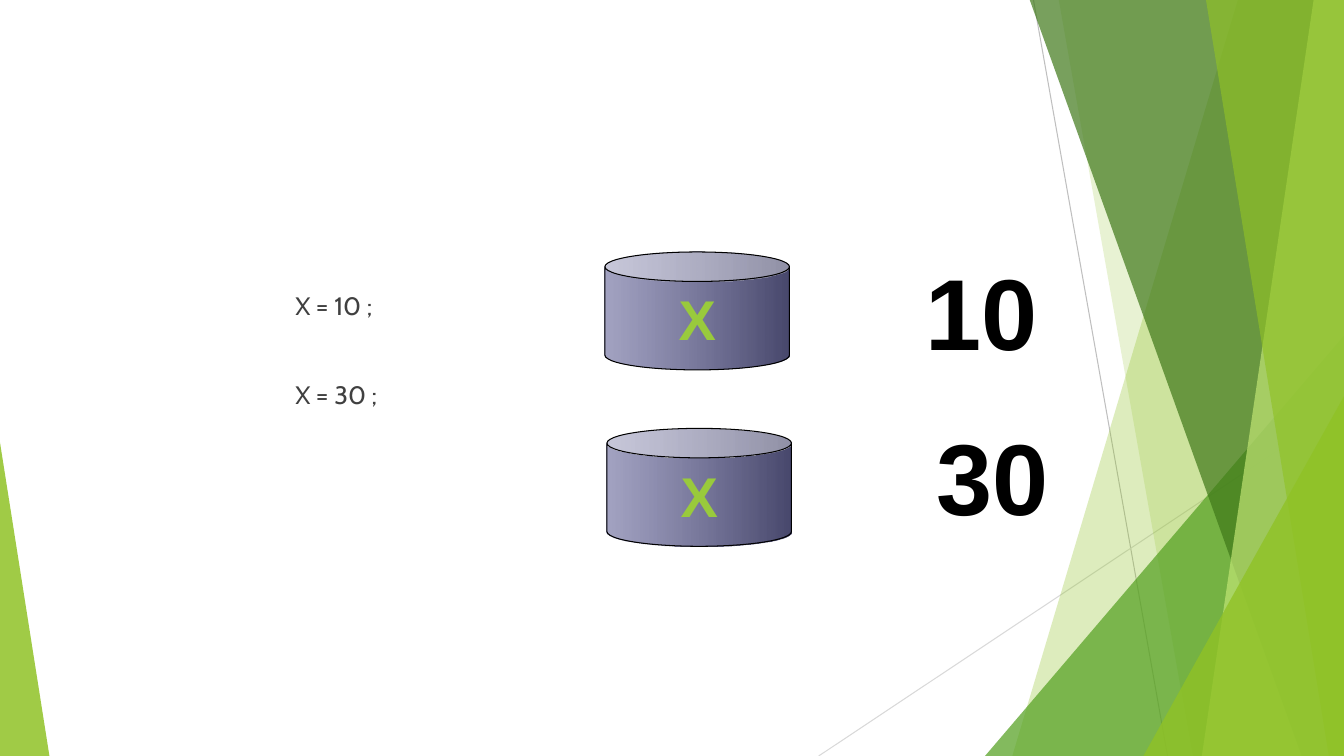
from lxml import etree
from pptx import Presentation
from pptx.dml.color import RGBColor
from pptx.enum import shapes, text
from pptx.oxml import ns
from pptx.util import Inches, Pt

WIDE, HIGH = 13.33, 7.5
LIME = RGBColor(0x90, 0xC2, 0x26)
GREEN = RGBColor(0x54, 0xA0, 0x21)
FOREST = RGBColor(0x3F, 0x78, 0x19)
PALE = RGBColor(0xC0, 0xE4, 0x74)
SILVER = RGBColor(0xBF, 0xBF, 0xBF)
MIST = RGBColor(0xD9, 0xD9, 0xD9)
SLATE = RGBColor(0x66, 0x66, 0x99)
LETTER = RGBColor(0x99, 0xCA, 0x3C)
GREY = RGBColor(0x40, 0x40, 0x40)
BLACK = RGBColor(0, 0, 0)


def adjust(color, tag, percent):
    """Add a modifier such as alpha or shade to a colour element."""
    mod = etree.SubElement(color, ns.qn("a:" + tag))
    mod.set("val", str(round(percent * 1000)))


def tint(shape, color, alpha):
    shape.shadow.inherit = False
    shape.fill.solid()
    shape.fill.fore_color.rgb = color
    adjust(shape.element.spPr.xpath(".//a:srgbClr")[0], "alpha", alpha)
    shape.line.fill.background()


def style(para, font, size, color, bold=False):
    for run in para.runs:
        run.font.name = font
        run.font.size = Pt(size)
        run.font.bold = bold
        run.font.color.rgb = color


# Decoration
def line(slide, start, end, color):
    link = slide.shapes.add_connector(
        shapes.MSO_CONNECTOR.STRAIGHT, *map(Inches, start + end))
    link.line.color.rgb = color
    link.line.width = Pt(0.75)
    etree.SubElement(link.element.spPr, ns.qn("a:effectLst"))


def band(slide, top, foot, color, alpha):
    """Fill from a slanted left edge to the right side of the slide."""
    points = [(top, -0.01), (WIDE, -0.01), (WIDE, HIGH), (foot, HIGH)]
    spots = [(Inches(x), Inches(y)) for x, y in points]
    pen = slide.shapes.build_freeform(*spots[0])
    pen.add_line_segments(spots[1:], close=True)
    tint(pen.convert_to_shape(), color, alpha)


def wedge(slide, left, width, height, peak, color, alpha):
    """Stand a triangle on the bottom edge of the slide."""
    box = map(Inches, (left, HIGH - height, width, height))
    shape = slide.shapes.add_shape(
        shapes.MSO_SHAPE.ISOSCELES_TRIANGLE, *box)
    shape.adjustments[0] = peak
    tint(shape, color, alpha)


def decor(slide):
    line(slide, (10.25, 0), (11.58, HIGH), SILVER)
    line(slide, (WIDE, 4.03), (8.12, HIGH), MIST)
    band(slide, 12.28, 10.04, LIME, 30)
    band(slide, 10.5, 11.83, LIME, 20)
    wedge(slide, 9.77, 3.56, 4.17, 1, GREEN, 72)
    band(slide, 10.21, 12.91, FOREST, 70)
    band(slide, 13.03, 11.92, PALE, 70)
    band(slide, 11.96, 13.18, LIME, 65)
    wedge(slide, 11.34, 1.99, 3.57, 1, LIME, 80)
    wedge(slide, 0, 0.49, 3.11, 0, LIME, 85)


# Assignment statements
def code(slide, left, top, width, height):
    box = slide.shapes.add_textbox(*map(Inches, (left, top, width, height)))
    frame = box.text_frame
    frame.word_wrap = True
    frame.text = "X = 10 ;\nX = 30 ;"
    frame.paragraphs[1].space_before = Pt(42)
    for para in frame.paragraphs:
        style(para, "Cabin", 18, GREY)


# Variable drawn as a can
def can(slide, left, top, width=1.83, height=1.17):
    shape = slide.shapes.add_shape(
        shapes.MSO_SHAPE.CAN, *map(Inches, (left, top, width, height)))
    shape.shadow.inherit = False
    shape.adjustments[0] = 0.25
    shape.fill.gradient()
    shape.fill.gradient_angle = 0
    for stop in shape.fill.gradient_stops:
        stop.color.rgb = SLATE
    light, dark = shape.element.spPr.xpath("./a:gradFill//a:srgbClr")
    adjust(light, "alpha", 60)
    adjust(dark, "shade", 46.27)
    shape.line.color.rgb = BLACK
    shape.line.width = Pt(0.75)
    frame = shape.text_frame
    frame.word_wrap = False
    frame.vertical_anchor = text.MSO_ANCHOR.MIDDLE
    frame.text = "X"
    frame.paragraphs[0].alignment = text.PP_ALIGN.CENTER
    style(frame.paragraphs[0], "Arial", 40, LETTER, True)


# Value stored in the variable
def value(slide, words, left, top, width=1.31, height=1.3):
    box = slide.shapes.add_textbox(*map(Inches, (left, top, width, height)))
    frame = box.text_frame
    frame.word_wrap = False
    frame.auto_size = text.MSO_AUTO_SIZE.SHAPE_TO_FIT_TEXT
    frame.text = words
    style(frame.paragraphs[0], "Arial", 72, BLACK, True)


def main():
    deck = Presentation()
    deck.slide_width, deck.slide_height = Inches(WIDE), Inches(HIGH)
    slide = deck.slides.add_slide(deck.slide_layouts[6])
    decor(slide)
    code(slide, 2.83, 2.83, 8.25, 4.5)
    can(slide, 6, 2.5)
    value(slide, "10", 9.08, 2.43)
    can(slide, 6.02, 4.25)
    value(slide, "30", 9.19, 4.07)
    deck.save("out.pptx")


if __name__ == "__main__":
    main()
